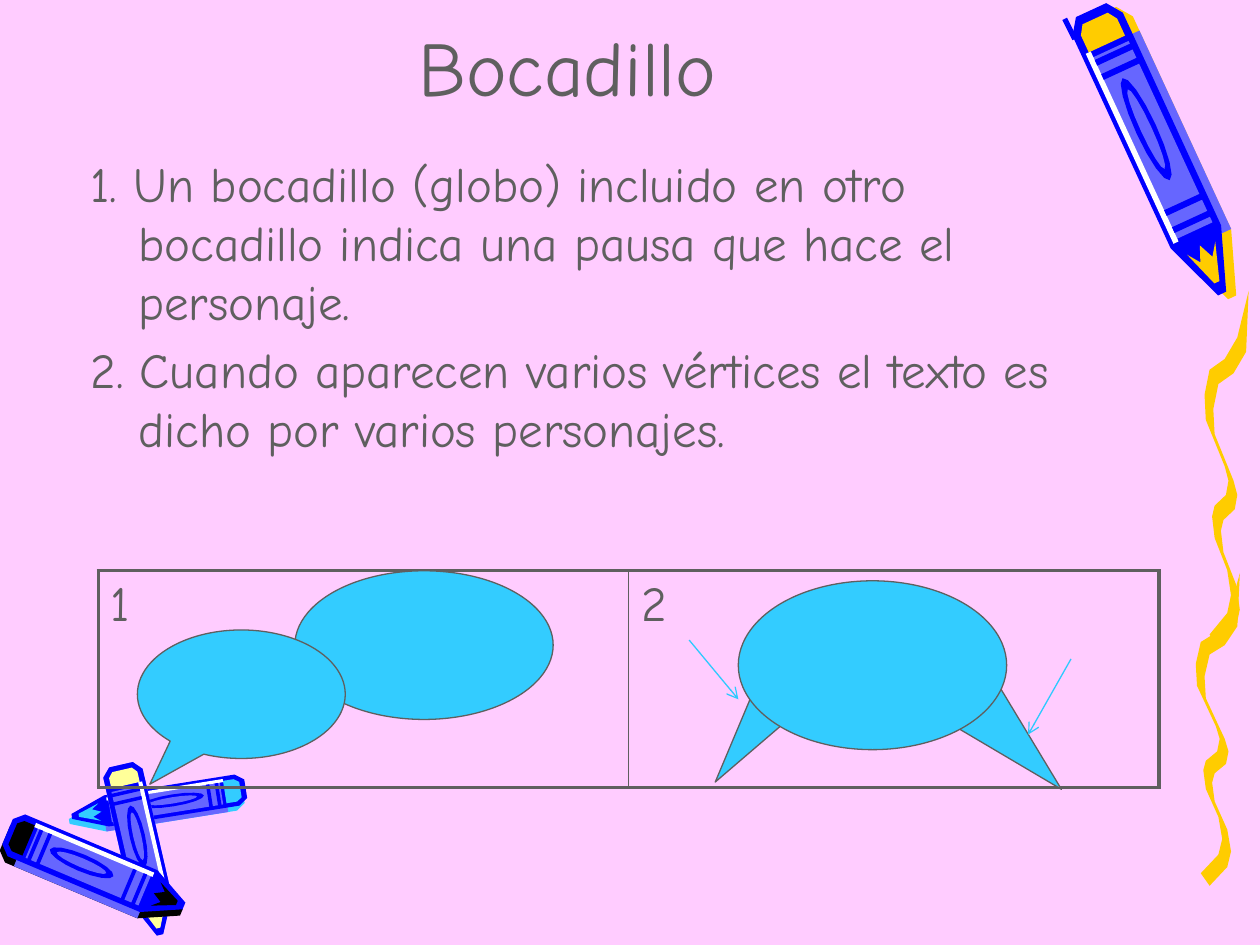
from math import cos, hypot, pi, sin

from lxml import etree
from pptx import Presentation
from pptx.dml.color import RGBColor
from pptx.enum.shapes import MSO_CONNECTOR, MSO_SHAPE
from pptx.enum.text import MSO_ANCHOR, PP_ALIGN
from pptx.oxml.ns import qn
from pptx.util import Inches, Pt

STRAIGHT = MSO_CONNECTOR.STRAIGHT
ELLIPSE = MSO_SHAPE.OVAL
CALLOUT = MSO_SHAPE.OVAL_CALLOUT
TRIANGLE = MSO_SHAPE.RIGHT_TRIANGLE
LEFT, CENTER = PP_ALIGN.LEFT, PP_ALIGN.CENTER
TOP, BOTTOM = MSO_ANCHOR.TOP, MSO_ANCHOR.BOTTOM

PINK, GREY, SKY, ARROW_BLUE = "FFCCFF", "5F5F5F", "33CCFF", "2DCAFE"
INK, VIOLET, GOLD, CREAM = "0000FF", "6666FF", "FFCC00", "FFFF99"
WHITE, BLACK = "FFFFFF", "000000"

# Crayon parts as (along, across): along runs from 0 at the base to 1 at the tip,
# across is a share of the width, positive on the lit side.
SILHOUETTE = [(0, 0.3), (0, -0.3), (0.05, -0.5), (0.8, -0.5),
              (1, -0.08), (1, 0.08), (0.8, 0.5), (0.05, 0.5)]
END_CAP = [(0.03, 0.25), (0.03, -0.25), (0.06, -0.36), (0.12, -0.36), (0.12, 0.36), (0.06, 0.36)]
POINT = [(0.84, -0.28), (0.88, -0.12), (0.83, 0), (0.88, 0.12), (0.84, 0.28), (0.96, 0.05), (0.96, -0.05)]
BANDS = (0.15, 0.2, 0.68, 0.74)
BAND_LENGTH = 0.02

# Bends of the wavy stroke from top to bottom: x in inches, y as a share of the height.
STROKE_BENDS = [(0.35, 0), (0.26, 0.13), (0.16, 0.19), (0.04, 0.22), (0, 0.29), (0.01, 0.36),
                (0.16, 0.49), (0.19, 0.53), (0.17, 0.57), (0.08, 0.6), (0.06, 0.63), (0.08, 0.69),
                (0.18, 0.78), (0.21, 0.85), (0.18, 0.9), (0.04, 0.96)]
NIB = (0.07, 0.04)


def rgb(value):
    return RGBColor.from_string(value)


def band(start, end, low, high):
    return [(start, low), (end, low), (end, high), (start, high)]


def oval(center, along, across, corners=16):
    angles = [2 * pi * corner / corners for corner in range(corners)]
    return [(center + along * cos(angle), across * sin(angle)) for angle in angles]


def write(paragraph, text, size=28, color=GREY, font="Comic Neue", align=LEFT, before=0):
    run = paragraph.add_run()
    run.text = text
    run.font.size, run.font.name = Pt(size), font
    run.font.color.rgb = rgb(color)
    paragraph.alignment = align
    paragraph.space_before = Pt(before)


class Board:
    """Holds the outline style and the slide being drawn."""

    def __init__(self, slide, outline=GREY, outline_width=0.75):
        self.shapes = slide.shapes
        self.outline, self.outline_width = outline, outline_width

    def polygon(self, points, color):
        start, *rest = [(Inches(x), Inches(y)) for x, y in points]
        builder = self.shapes.build_freeform(*start)
        builder.add_line_segments(rest, close=True)
        polygon = builder.convert_to_shape()
        polygon.shadow.inherit = False
        polygon.fill.solid()
        polygon.fill.fore_color.rgb = rgb(color)
        polygon.line.fill.background()

    def crayon(self, base, tip, width, wax, lit=1, shade=(0, 0), shade_color=VIOLET):
        """Draw a crayon from base to tip; lit (1 or -1) picks the highlighted side."""
        (x, y), dx, dy = base, tip[0] - base[0], tip[1] - base[1]
        across_scale = lit * width / hypot(dx, dy)

        def part(outline, color, shift=(0, 0)):
            points = [(along, across * across_scale) for along, across in outline]
            self.polygon([(x + along * dx - across * dy + shift[0],
                           y + along * dy + across * dx + shift[1])
                          for along, across in points], color)

        part(SILHOUETTE, shade_color, shade)
        part(band(0.1, 0.8, -0.5, 0.5), VIOLET, shade)
        part(SILHOUETTE, INK)
        part(END_CAP, wax)
        part(band(0.14, 0.78, -0.38, 0.36), VIOLET)
        part(band(0.12, 0.79, 0.32, 0.42), WHITE)
        for start in BANDS:
            part(band(start, start + BAND_LENGTH, -0.45, 0.32), INK)
        part(oval(0.42, 0.18, 0.19), INK)
        part(oval(0.42, 0.14, 0.1), VIOLET)
        part(POINT, wax)

    def wavy_stroke(self, left, top, height):
        """Draw the bends with a slanted nib: down one edge and back up the other."""
        edge = [(left + x, top + y * height) for x, y in STROKE_BENDS]
        far_edge = [(x + NIB[0], y + NIB[1] * height) for x, y in edge[1:]]
        self.polygon(edge + far_edge[::-1], GOLD)

    def text(self, box, paragraphs, anchor=TOP, hanging=0, **style):
        frame = self.shapes.add_textbox(*map(Inches, box)).text_frame
        frame.word_wrap, frame.vertical_anchor = True, anchor
        for number, content in enumerate(paragraphs):
            paragraph = frame.add_paragraph() if number else frame.paragraphs[0]
            write(paragraph, content, **style)
            if hanging:
                properties = paragraph._p.get_or_add_pPr()
                properties.set("marL", str(Inches(hanging)))
                properties.set("indent", str(-Inches(hanging)))

    def balloon(self, kind, box, rotation=0, adjustments=()):
        balloon = self.shapes.add_shape(kind, *map(Inches, box))
        balloon.shadow.inherit = False
        balloon.rotation = rotation
        for number, value in enumerate(adjustments):
            balloon.adjustments[number] = value
        balloon.fill.solid()
        balloon.fill.fore_color.rgb = rgb(SKY)
        balloon.line.color.rgb = rgb(self.outline)
        balloon.line.width = Pt(self.outline_width)

    def line(self, start, end, color, width, arrow=False):
        line = self.shapes.add_connector(STRAIGHT, *map(Inches, start + end))
        line.line.color.rgb, line.line.width = rgb(color), Pt(width)
        if arrow:
            etree.SubElement(line.line._get_or_add_ln(), qn("a:tailEnd"), type="arrow")
        etree.SubElement(line._element.spPr, qn("a:effectLst"))

    def panels(self, box, labels, outer=2.25, inner=1):
        """Draw a one-row table with a heavy frame and thin dividers."""
        table = self.shapes.add_table(1, len(labels), *map(Inches, box)).table
        table.first_row = table.horz_banding = False
        for column, label in enumerate(labels):
            cell = table.cell(0, column)
            write(cell.text_frame.paragraphs[0], label, before=5.6)
            widths = {"L": inner if column else outer,
                      "R": outer if column == len(labels) - 1 else inner,
                      "T": outer, "B": outer}
            for side, width in widths.items():
                border = etree.SubElement(cell._tc.get_or_add_tcPr(), qn("a:ln" + side), w=str(Pt(width)))
                fill = etree.SubElement(border, qn("a:solidFill"))
                etree.SubElement(fill, qn("a:srgbClr"), val=self.outline)
            cell.fill.background()


def main():
    deck = Presentation()
    deck.slide_width, deck.slide_height = Inches(10), Inches(7.5)
    slide = deck.slides.add_slide(deck.slide_layouts[6])
    slide.background.fill.solid()
    slide.background.fill.fore_color.rgb = rgb(PINK)
    board = Board(slide)

    board.crayon((1.95, 6.26), (0.57, 6.48), 0.25, SKY, shade=(-0.02, 0.04), shade_color=SKY)
    board.crayon((0.96, 6.07), (1.27, 7.42), 0.32, CREAM, lit=-1)
    board.crayon((0.06, 6.6), (1.46, 7.19), 0.36, BLACK, lit=-1, shade=(-0.02, 0.05), shade_color=BLACK)
    for top, height in ((4.55, 2.48), (2.31, 2.84)):
        board.wavy_stroke(9.49 if top > 4 else 9.56, top, height)
    board.crayon((8.66, 0.08), (9.7, 2.33), 0.44, GOLD, shade=(0.08, 0.03), shade_color=GOLD)
    board.line((8.45, 0.15), (8.53, 0.31), INK, 3)

    board.text((0.75, 0.17, 7.51, 0.77), ["Bocadillo"], anchor=BOTTOM, size=44, align=CENTER)
    board.text((0.62, 1.17, 7.89, 2.66), [
        "1. Un bocadillo (globo) incluido en otro bocadillo indica una pausa que hace el personaje.",
        "2. Cuando aparecen varios vértices el texto es dicho por varios personajes.",
    ], hanging=0.38, before=5.6)

    board.panels((0.78, 4.53, 8.42, 1.72), ["1", "2"])
    board.balloon(ELLIPSE, (2.34, 4.53, 2.05, 1.18))
    board.balloon(CALLOUT, (1.09, 5, 1.65, 1.02), adjustments=(-0.44, 0.7))
    board.balloon(TRIANGLE, (7.65, 5.46, 0.55, 1.02), rotation=148.9)
    board.balloon(TRIANGLE, (5.64, 5.09, 0.55, 1.1), rotation=229.4)
    board.balloon(ELLIPSE, (5.86, 4.61, 2.13, 1.34))
    for start, vertex in (((8.5, 5.23), (8.16, 5.83)), ((5.47, 5.08), (5.86, 5.55))):
        board.line(start, vertex, ARROW_BLUE, 0.75, arrow=True)
    deck.save("out.pptx")


if __name__ == "__main__":
    main()
